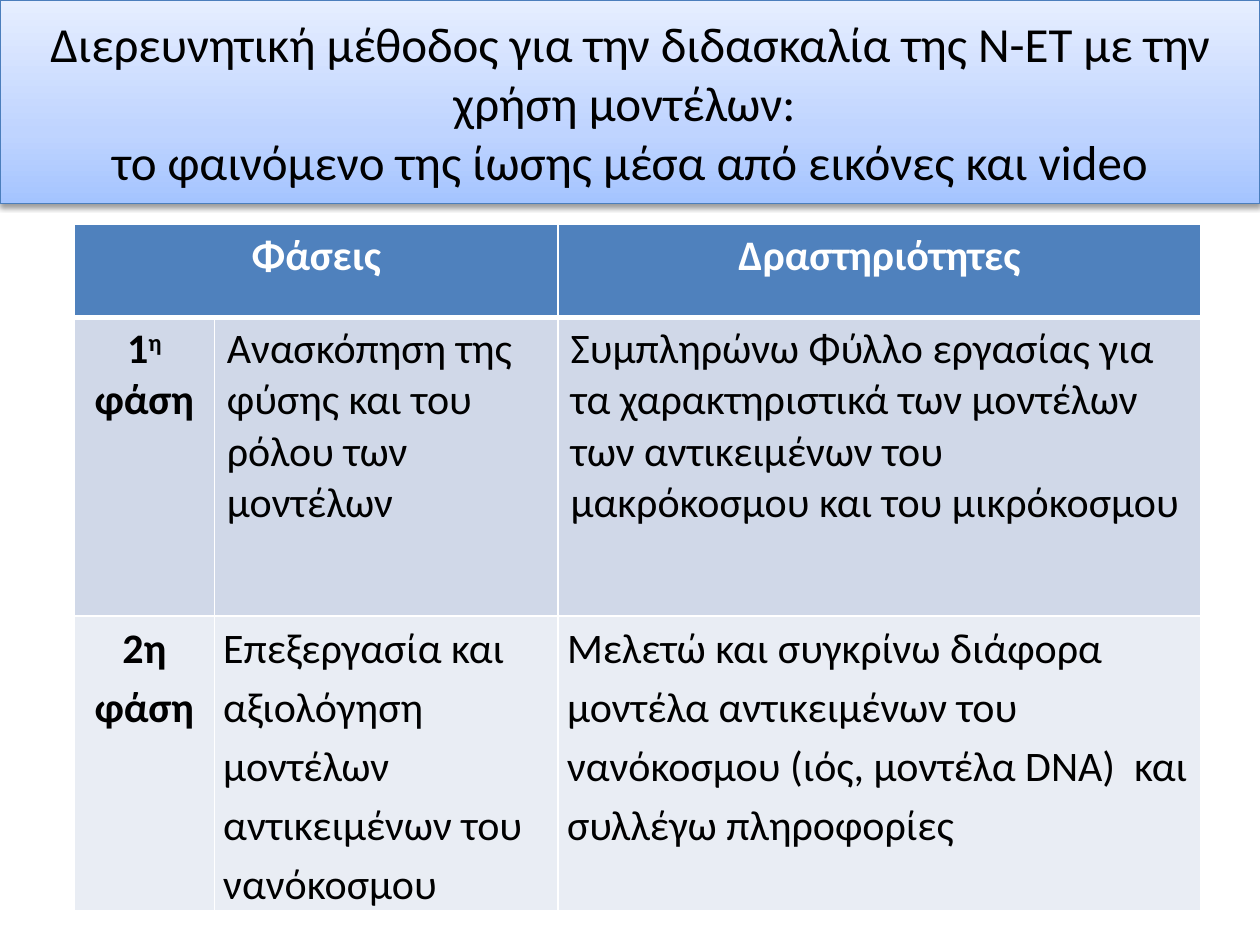
from dataclasses import dataclass

from lxml.etree import SubElement
from pptx import Presentation
from pptx.dml.color import RGBColor
from pptx.enum.text import MSO_ANCHOR as Anchor, MSO_AUTO_SIZE as AutoSize, PP_ALIGN as Align
from pptx.oxml import parse_xml
from pptx.oxml.ns import nsdecls, qn
from pptx.util import Cm, Pt

COLORS = {
    "text": "000000",
    "white": "FFFFFF",
    "header": "4F81BD",
    "first": "D0D8E8",
    "second": "E9EDF4",
    "outline": "4B7EBC",
}
TITLE_GRADIENT = ((0, "A4C4FF"), (35, "BFD4FF"), (100, "E6EEFF"))
FONT = "Calibri"
COLUMN_WIDTHS = (2.82, 6.93, 12.96)


@dataclass(frozen=True)
class Row:
    height: float
    fill: str
    texts: tuple
    color: str = "text"
    spacing: float = 1.0
    compact: bool = False
    header: bool = False


TITLE = (
    "Διερευνητική μέθοδος για την διδασκαλία της Ν-ΕΤ με την χρήση μοντέλων: ",
    "το φαινόμενο της ίωσης μέσα από εικόνες και video",
)
ROWS = (
    Row(1.88, "header", ("Φάσεις", "", "Δραστηριότητες"), color="white", header=True),
    Row(6.02, "first", (
        ("1", "η", " φάση"),
        "Ανασκόπηση της φύσης και του ρόλου των μοντέλων",
        "Συμπληρώνω Φύλλο εργασίας για τα χαρακτηριστικά των μοντέλων των "
        "αντικειμένων του μακρόκοσμου και του μικρόκοσμου",
    )),
    Row(4.78, "second", (
        "2η φάση",
        "Επεξεργασία και αξιολόγηση μοντέλων αντικειμένων του νανόκοσμου",
        "Μελετώ και συγκρίνω διάφορα μοντέλα αντικειμένων του νανόκοσμου "
        "(ιός, μοντέλα DNA)  και συλλέγω πληροφορίες",
    ), spacing=1.15, compact=True),
)


def rgb(name: str) -> RGBColor:
    return RGBColor.from_string(COLORS[name])


def write(paragraph, text, *, size: float, color: str = "text", bold: bool = False,
          align=Align.LEFT, spacing: float = 1.0) -> None:
    paragraph.alignment = align
    paragraph.line_spacing = spacing
    parts = (text,) if isinstance(text, str) else text
    for index, part in enumerate(parts):
        run = paragraph.add_run()
        run.text = part
        run.font.name = FONT
        run.font.size = Pt(size)
        run.font.bold = bold
        run.font.color.rgb = rgb(color)
        if index == 1:
            run.font._element.set("baseline", "30000")


def add_borders(cell, header: bool, below_header: bool) -> None:
    properties = cell._tc.get_or_add_tcPr()
    for side in "LRTB":
        thick = (header and side == "B") or (below_header and side == "T")
        properties.append(parse_xml(
            f'<a:ln{side} {nsdecls("a")} w="{Pt(3 if thick else 1)}"><a:solidFill>'
            f'<a:srgbClr val="{COLORS["white"]}"/></a:solidFill></a:ln{side}>'))


def draw_title(shape) -> None:
    shape.left, shape.top, shape.width, shape.height = Cm(0), Cm(0), Cm(25.4), Cm(4.11)
    shape.fill.gradient()
    shape.fill.gradient_angle = 90
    stops = shape._element.spPr.find(qn("a:gradFill")).find(qn("a:gsLst"))
    for stop in list(stops):
        stops.remove(stop)
    for position, color in TITLE_GRADIENT:
        stop = SubElement(stops, qn("a:gs"), pos=str(position * 1000))
        SubElement(stop, qn("a:srgbClr"), val=color)
    shape.line.color.rgb = rgb("outline")
    shape.line.width = Pt(0.75)
    shape._element.spPr.append(parse_xml(
        f'<a:effectLst {nsdecls("a")}><a:outerShdw blurRad="{Pt(3.1)}" dist="{Pt(1.6)}" '
        f'dir="5400000" rotWithShape="0"><a:srgbClr val="{COLORS["text"]}">'
        '<a:alpha val="38000"/></a:srgbClr></a:outerShdw></a:effectLst>'))
    frame = shape.text_frame
    frame.word_wrap = True
    frame.auto_size = AutoSize.NONE
    frame.vertical_anchor = Anchor.MIDDLE
    for index, text in enumerate(TITLE):
        paragraph = frame.add_paragraph() if index else frame.paragraphs[0]
        write(paragraph, text, size=28, align=Align.CENTER)


def draw_table(slide) -> None:
    table = slide.shapes.add_table(
        len(ROWS), len(COLUMN_WIDTHS), Cm(1.5), Cm(4.52),
        Cm(sum(COLUMN_WIDTHS)), Cm(sum(row.height for row in ROWS))).table
    for column, width in zip(table.columns, COLUMN_WIDTHS):
        column.width = Cm(width)
    for row_index, row in enumerate(ROWS):
        table.rows[row_index].height = Cm(row.height)
        for column_index, text in enumerate(row.texts):
            cell = table.cell(row_index, column_index)
            add_borders(cell, row.header, row_index == 1)
            cell.fill.solid()
            cell.fill.fore_color.rgb = rgb(row.fill)
            if row.compact:
                cell.margin_left = cell.margin_right = Cm(0.18)
                cell.margin_top = cell.margin_bottom = Cm(0)
            if text:
                emphasised = row.header or column_index == 0
                write(cell.text_frame.paragraphs[0], text, size=24, color=row.color,
                      bold=emphasised, spacing=row.spacing,
                      align=Align.CENTER if emphasised else Align.LEFT)
    table.cell(0, 0).merge(table.cell(0, 1))


def main() -> None:
    presentation = Presentation()
    presentation.slide_width, presentation.slide_height = Cm(25.4), Cm(19.05)
    slide = presentation.slides.add_slide(presentation.slide_layouts[5])
    draw_table(slide)
    draw_title(slide.shapes.title)
    presentation.save("out.pptx")


if __name__ == "__main__":
    main()
